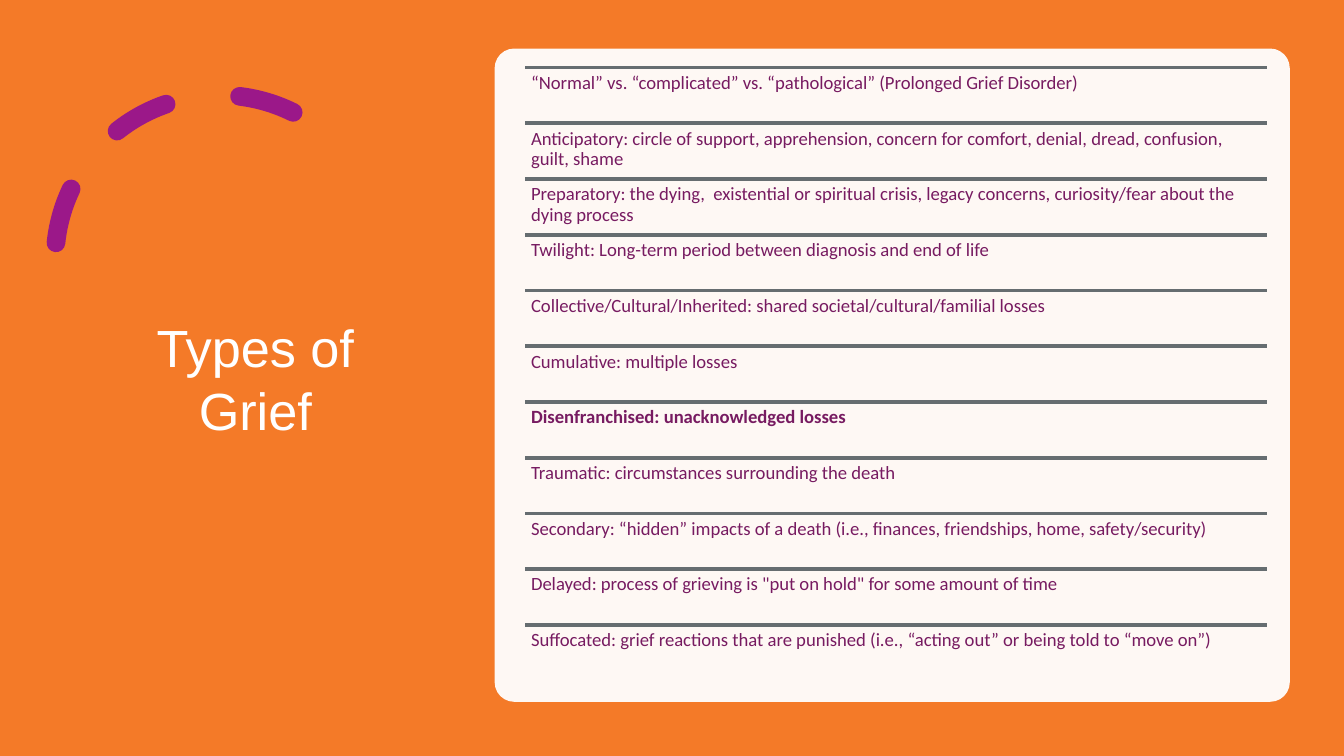
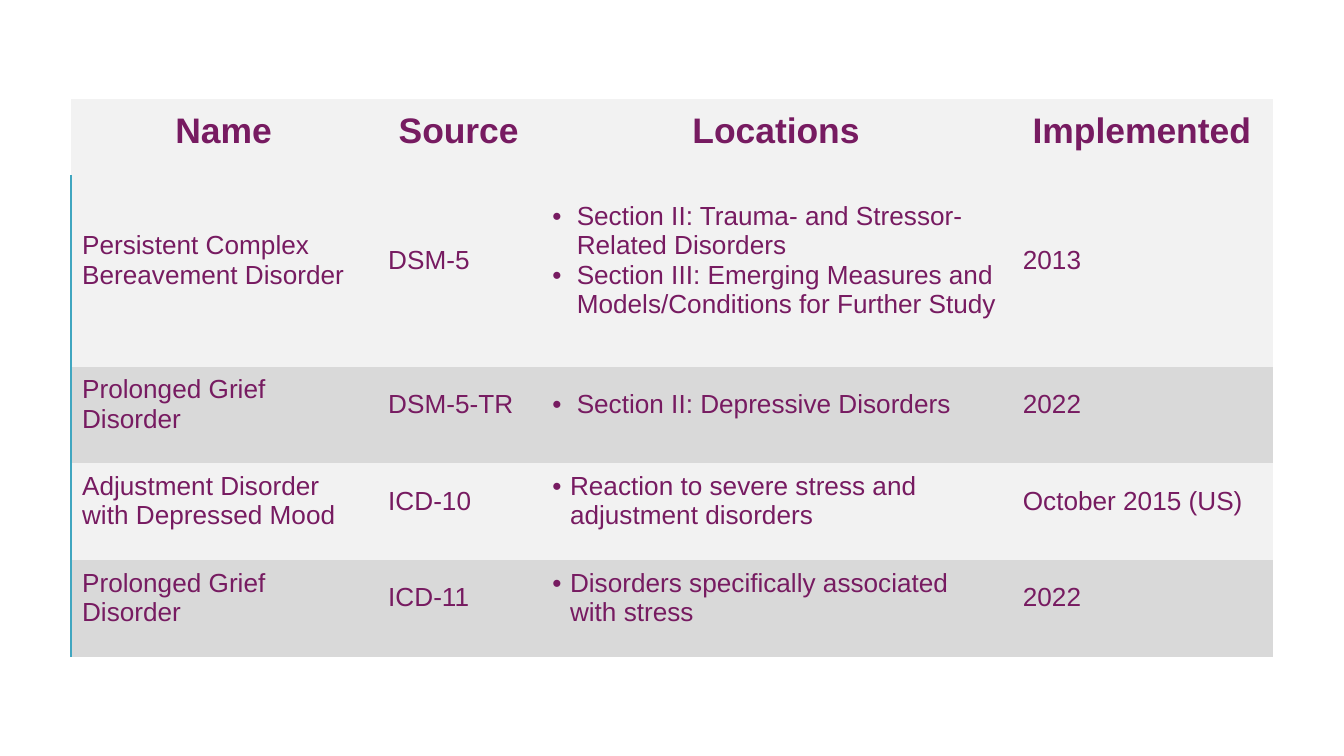
from lxml import etree
from pptx import Presentation
from pptx.dml.color import RGBColor
from pptx.enum import shapes, text
from pptx.oxml import ns
from pptx.util import Pt

COLORS = {
    "orange": "F47A28", "violet": "9B1889", "plum": "771B61", "white": "FFFFFF",
    "rule": "666D70", "light": "F2F2F2", "dark": "D9D9D9", "teal": "40A6C0",
}
NO_TABLE_STYLE = "{2D5ABB26-0587-4C30-8999-92F81FD0307C}"

GRIEF_TYPES = [
    "“Normal” vs. “complicated” vs. “pathological” (Prolonged Grief Disorder)",
    "Anticipatory: circle of support, apprehension, concern for comfort, denial, "
    "dread, confusion, guilt, shame",
    "Preparatory: the dying,  existential or spiritual crisis, legacy concerns, "
    "curiosity/fear about the dying process",
    "Twilight: Long-term period between diagnosis and end of life",
    "Collective/Cultural/Inherited: shared societal/cultural/familial losses",
    "Cumulative: multiple losses",
    "Disenfranchised: unacknowledged losses",
    "Traumatic: circumstances surrounding the death",
    "Secondary: “hidden” impacts of a death (i.e., finances, friendships, home, "
    "safety/security)",
    'Delayed: process of grieving is "put on hold" for some amount of time',
    "Suffocated: grief reactions that are punished (i.e., “acting out” or being "
    "told to “move on”)",
]
EMPHASIZED = "Disenfranchised"

HEADINGS = ["Name", "Source", "Locations", "Implemented"]
# name, source, locations, implemented, bullet indent
DIAGNOSES = [
    ("Persistent Complex Bereavement Disorder", "DSM-5",
     ["Section II: Trauma- and Stressor-Related Disorders",
      "Section III: Emerging Measures and Models/Conditions for Further Study"],
     "2013", 13),
    ("Prolonged Grief Disorder", "DSM-5-TR",
     ["Section II: Depressive Disorders"], "2022", 13),
    ("Adjustment Disorder with Depressed Mood", "ICD-10",
     ["Reaction to severe stress and adjustment disorders"],
     "October 2015 (US)", 9.4),
    ("Prolonged Grief Disorder", "ICD-11",
     ["Disorders specifically associated with stress"], "2022", 9.4),
]
COLUMN_WIDTHS = [164, 88, 252, 140]
ROW_HEIGHTS = [40.8, 102.6, 51.8, 51.8, 51.8]


def rgb(name):
    return RGBColor.from_string(COLORS[name])


def sub(parent, tag, **attrs):
    return etree.SubElement(parent, ns.qn(tag), attrs)


def add_text(tf, content, size=14, color="plum", font="Arial", bold=False,
             align=text.PP_ALIGN.LEFT, spacing=None, bullet_indent=None):
    """Fill the empty first paragraph, or append a new one."""
    p = tf.add_paragraph() if tf.text else tf.paragraphs[0]
    if bullet_indent:
        pPr = p._p.get_or_add_pPr()
        pPr.set("marL", str(Pt(bullet_indent)))
        pPr.set("indent", str(-Pt(bullet_indent)))
        sub(pPr, "a:buFont", typeface="Arial")
        sub(pPr, "a:buChar", char="•")
    p.alignment = align
    if spacing:
        p.line_spacing = spacing
    r = p.add_run()
    r.text = content
    r.font.size, r.font.name, r.font.bold = Pt(size), font, bold
    r.font.color.rgb = rgb(color)


def set_margins(box, left, top, right, bottom):
    box.margin_left, box.margin_top = Pt(left), Pt(top)
    box.margin_right, box.margin_bottom = Pt(right), Pt(bottom)


def add_panel(s, kind, left, top, width, height, fill, alpha=None):
    sp = s.shapes.add_shape(kind, Pt(left), Pt(top), Pt(width), Pt(height))
    sp.shadow.inherit = False
    sp.fill.solid()
    sp.fill.fore_color.rgb = rgb(fill)
    sp.line.fill.background()
    if alpha:
        clr = sp._element.spPr.find(".//" + ns.qn("a:srgbClr"))
        sub(clr, "a:alpha", val=str(alpha * 1000))
    return sp


def add_dashed_arc(s, left, top, size):
    sp = s.shapes.add_shape(shapes.MSO_SHAPE.ARC, Pt(left), Pt(top), Pt(size), Pt(size))
    sp.shadow.inherit = False
    sp.adjustments[0], sp.adjustments[1] = 146.13, 0
    sp._element.spPr.find(ns.qn("a:xfrm")).set("flipH", "1")
    sp.fill.background()
    sp.line.color.rgb = rgb("violet")
    sp.line.width = Pt(10)
    ln = sp.line._get_or_add_ln()
    ln.set("cap", "rnd")
    sub(ln, "a:prstDash", val="dash")
    sub(ln, "a:round")


def add_title(s, content, left, top, width, height):
    sp = s.shapes.title
    sp.left, sp.top, sp.width, sp.height = Pt(left), Pt(top), Pt(width), Pt(height)
    s.shapes._spTree.append(sp._element)  # bring in front of the background
    tf = sp.text_frame
    tf.word_wrap = True
    tf.vertical_anchor = text.MSO_ANCHOR.MIDDLE
    add_text(tf, content, size=28, color="white", align=text.PP_ALIGN.CENTER)


def add_ruled_list(s, items, left, top, width, pitch):
    group = s.shapes.add_group_shape()
    for i, item in enumerate(items):
        y = top + i * pitch
        rule = group.shapes.add_connector(
            shapes.MSO_CONNECTOR.STRAIGHT, Pt(left), Pt(y), Pt(left + width), Pt(y))
        rule.line.color.rgb = rgb("rule")
        rule.line.width = Pt(2)
        sub(rule._element.spPr, "a:effectLst")
        box = group.shapes.add_textbox(Pt(left), Pt(y), Pt(width), Pt(pitch))
        tf = box.text_frame
        tf.word_wrap = True
        set_margins(tf, 3, 3, 3, 3)
        add_text(tf, item, size=10, font="Calibri", spacing=0.9,
                 bold=item.startswith(EMPHASIZED))


def add_left_border(cell):
    tcPr = cell._tc.get_or_add_tcPr()
    ln = etree.Element(ns.qn("a:lnL"), w=str(Pt(1)))
    sub(sub(ln, "a:solidFill"), "a:srgbClr", val=COLORS["teal"])
    tcPr.insert(0, ln)


def format_cell(cell, fill, anchor):
    cell.fill.solid()
    cell.fill.fore_color.rgb = rgb(fill)
    cell.vertical_anchor = anchor
    set_margins(cell, 6, 1.5, 6.5, 13)


def add_diagnosis_table(s, left, top):
    frame = s.shapes.add_table(
        len(ROW_HEIGHTS), len(COLUMN_WIDTHS), Pt(left), Pt(top),
        Pt(sum(COLUMN_WIDTHS)), Pt(sum(ROW_HEIGHTS)))
    table = frame.table
    table._tbl.tblPr.find(ns.qn("a:tableStyleId")).text = NO_TABLE_STYLE
    table.horz_banding = False
    for column, width in zip(table.columns, COLUMN_WIDTHS):
        column.width = Pt(width)
    for row, height in zip(table.rows, ROW_HEIGHTS):
        row.height = Pt(height)

    # Heading row
    for col, heading in enumerate(HEADINGS):
        cell = table.cell(0, col)
        format_cell(cell, "light", text.MSO_ANCHOR.BOTTOM)
        add_text(cell.text_frame, heading, size=19, bold=True,
                 align=text.PP_ALIGN.CENTER)

    # Body rows, alternately light and dark
    for row, (*values, indent) in enumerate(DIAGNOSES, 1):
        for col, value in enumerate(values):
            cell = table.cell(row, col)
            format_cell(cell, "light" if row % 2 else "dark", text.MSO_ANCHOR.MIDDLE)
            if isinstance(value, list):
                for location in value:
                    add_text(cell.text_frame, location, bullet_indent=indent)
            else:
                add_text(cell.text_frame, value)
        add_left_border(table.cell(row, 0))


def main():
    prs = Presentation()
    prs.slide_width, prs.slide_height = Pt(720), Pt(405)

    # Types of grief
    s = prs.slides.add_slide(prs.slide_layouts[5])
    add_panel(s, shapes.MSO_SHAPE.RECTANGLE, 0, 0, 720, 405, "orange")
    add_dashed_arc(s, 29.5, 51, 176.5)
    add_title(s, "Types of Grief", 49.7, 38.2, 174.2, 329)
    card = add_panel(s, shapes.MSO_SHAPE.ROUNDED_RECTANGLE, 265, 26, 426, 350,
                     "white", alpha=95)
    card.adjustments[0] = 0.03
    add_ruled_list(s, GRIEF_TYPES, 281.5, 36.2, 397.5, 29.86)

    # Diagnoses
    s = prs.slides.add_slide(prs.slide_layouts[6])
    add_diagnosis_table(s, 38, 53.1)

    prs.save("out.pptx")


if __name__ == "__main__":
    main()
